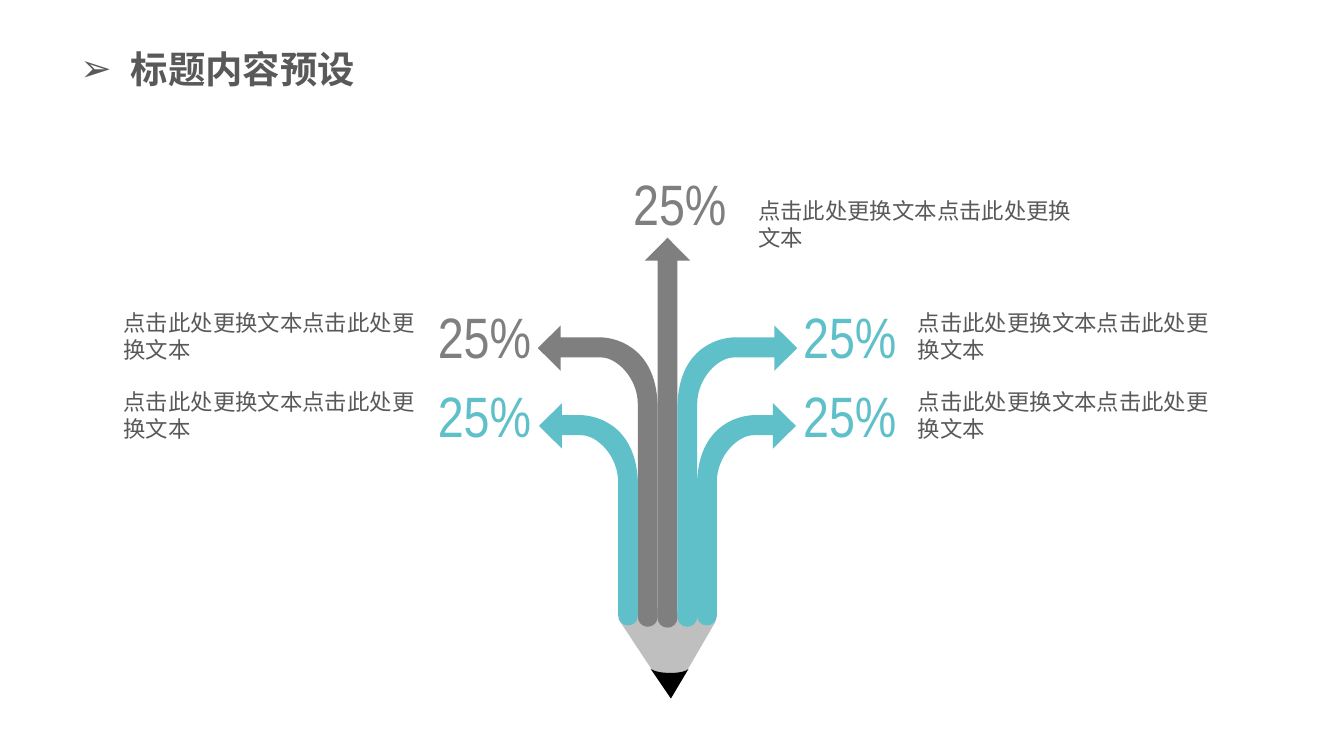
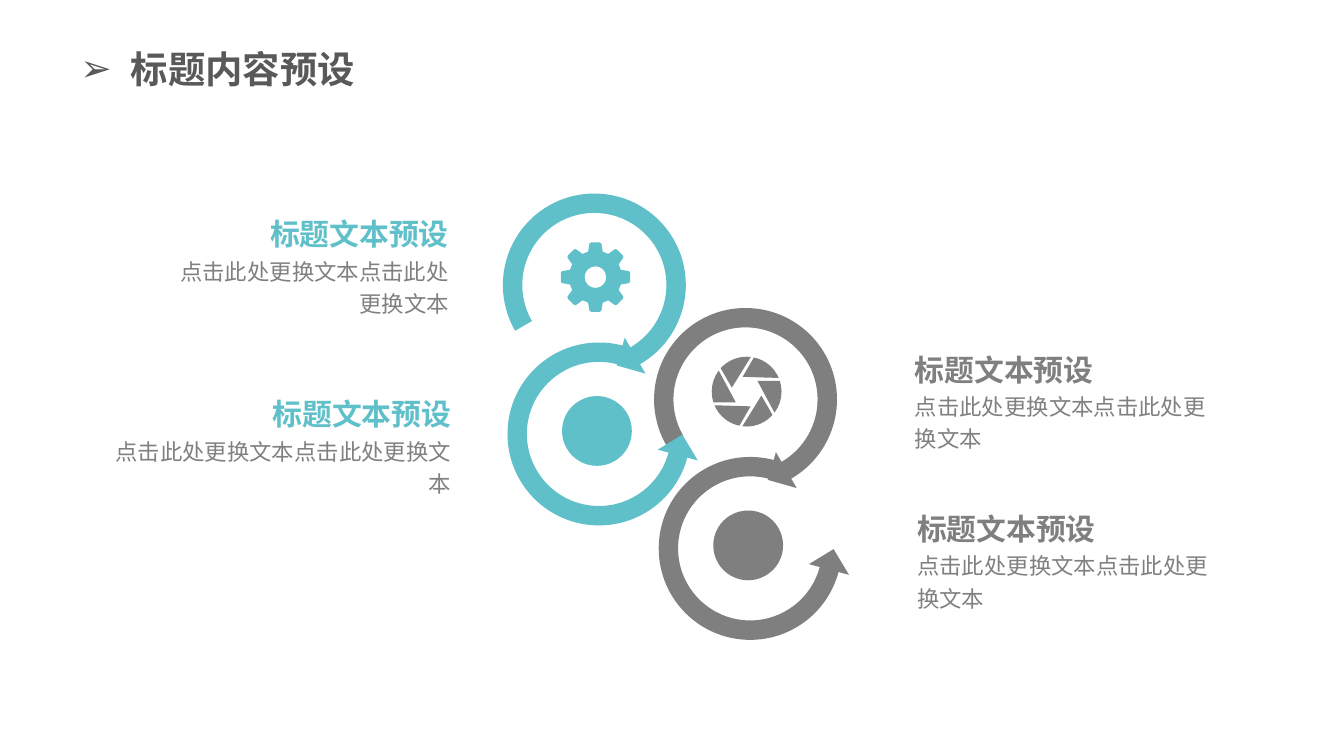
from math import ceil, cos, floor, radians, sin, tan

from lxml.etree import Element as Node, SubElement as Sub
from pptx import Presentation as Deck
from pptx.dml.color import RGBColor as Rgb
from pptx.enum.shapes import MSO_SHAPE as Kind
from pptx.enum.text import MSO_ANCHOR as Anchor, MSO_AUTO_SIZE as Auto, PP_ALIGN as Align
from pptx.oxml.ns import qn
from pptx.util import Pt

HUES = {"teal": "5FC0C9", "gray": "7F7F7F", "soft": "808080", "dark": "595959",
        "wood": "BFBFBF", "lead": "000000"}
SANS = "Noto Sans CJK SC"
SLIM = "Arial Narrow"
HEAD = "标题内容预设"
NAME = "标题文本预设"
BODY = "点击此处更换文本点击此处更换文本"


def hue(key):
    return Rgb.from_string(HUES[key])


def write(slide, text, box, size=12, font=SANS, color="dark", bold=False, right=False,
          pad=(0, 0, 0, 0), wrap=True, mid=False, space=None, bullet=None, grow=False):
    frame = slide.shapes.add_textbox(*map(Pt, box)).text_frame
    frame.word_wrap = wrap
    frame.auto_size = Auto.SHAPE_TO_FIT_TEXT if grow else Auto.NONE
    frame.vertical_anchor = Anchor.MIDDLE if mid else Anchor.TOP
    (frame.margin_left, frame.margin_top,
     frame.margin_right, frame.margin_bottom) = map(Pt, pad)
    para = frame.paragraphs[0]
    para.alignment = Align.RIGHT if right else Align.LEFT
    if space:
        para.line_spacing = space
    if bullet:
        props = para._p.get_or_add_pPr()
        props.set("marL", str(Pt(27)))
        props.set("indent", str(Pt(-27)))
        Sub(props, qn("a:buFont")).set("typeface", "Arial")
        Sub(props, qn("a:buChar")).set("char", bullet)
    run = para.add_run()
    run.text = text
    run.font.size = Pt(size)
    run.font.bold = bold
    run.font.color.rgb = hue(color)
    run.font.name = font
    Sub(run._r.get_or_add_rPr(), qn("a:ea")).set("typeface", font)


def paint(shape, color):
    shape.shadow.inherit = False
    shape.fill.solid()
    shape.fill.fore_color.rgb = hue(color)
    shape.line.fill.background()


def polar(r, deg):
    return r * cos(radians(deg)), r * sin(radians(deg))


def arc(r, start, sweep):
    end = start + sweep
    low, high = sorted((start, end))
    cuts = [90 * n for n in range(ceil(low / 90), floor(high / 90) + 1)]
    stops = sorted({start, end, *cuts}, reverse=sweep < 0)
    steps = [polar(r, start)]
    for a, b in zip(stops, stops[1:]):
        k = 4 / 3 * tan(radians(b - a) / 4)
        (x, y), (p, q) = polar(r, a), polar(r, b)
        steps.append((x - k * y, y + k * x, p + k * q, q - k * p, p, q))
    return steps


def cap(x, y, r, turn):
    return [tuple(v + (y if n % 2 else x) for n, v in enumerate(step))
            for step in arc(r, 90 + 90 * turn, -180 * turn)]


def draw(slide, x, y, loops, color, flip=1):
    def place(step):
        return [(Pt(x + flip * a), Pt(y + b)) for a, b in zip(step[::2], step[1::2])]

    loops = [[place(step) for step in loop] for loop in loops]
    pen = slide.shapes.build_freeform(*loops[0][0][-1], scale=1.0)
    for n, loop in enumerate(loops):
        if n:
            pen.move_to(*loop[0][-1])
        pen.add_line_segments([step[-1] for step in loop[1:]], close=True)
    shape = pen.convert_to_shape()
    lines = list(shape._element.iter(qn("a:lnTo")))
    for line, step in zip(lines, (step for loop in loops for step in loop[1:])):
        if len(step) == 3:
            curve = Node(qn("a:cubicBezTo"))
            for a, b in step:
                Sub(curve, qn("a:pt"), x=str(a - shape.left), y=str(b - shape.top))
            line.getparent().replace(line, curve)
    paint(shape, color)


def title(slide):
    write(slide, HEAD, (36, 21, 202, 32), size=20, bold=True,
          pad=(7.2, 3.6, 7.2, 3.6), bullet="➢", grow=True)


def bend(slide, x, y, side, edge, tip, foot, color):
    far, back = edge + 10.6, tip - 12.3
    steps = [(tip, 0), (back, -12.2), (back, -5.8), (edge + 31.7, -5.8),
             (edge + 19.4, -5.8, edge, 2.1, edge, 32.4),
             *cap(edge + 5.3, foot, 5.3, 1), (far, 30.4),
             (far, 15.8, edge + 22, 5, edge + 30.3, 5), (back, 5), (back, 12.2)]
    draw(slide, x, y, [steps], color, side)


def pencil(slide, x, y):
    foot = 203.6
    wood = [(-14, 0), (-14, 0, -6.8, -6.5, -1.1, -5.8), (4, -5, 12.6, 0.7, 14, 0),
            (16.2, -0.7, 21.2, -5.8, 22.7, -5.8), (24.8, -5, 28, -6.5, 25.6, 2.2),
            (1.8, 43.2), (-26.3, 0.7)]
    lead = [(-9, 27.4), (1.8, 43.2), (11.2, 27.4), (9.7, 28.8, 6.1, 29.5, 1.8, 29.5),
            (-3.2, 29.5, -6.8, 28.8, -9, 27.4)]
    shaft = [(0, 0), (12.2, 12.3), (5.3, 12.3), *cap(0, foot, 5.3, -1),
             (-5.3, 12.3), (-12.2, 12.3)]
    draw(slide, x, y + foot, [wood], "wood")
    draw(slide, x, y + foot, [lead], "lead")
    draw(slide, x, y, [shaft], "gray")
    high, low = (5.3, 69.5, 144), (15.8, 68.8, 101.6)
    bend(slide, x, y + 59.1, -1, *high, "gray")
    bend(slide, x, y + 100.8, -1, *low, "teal")
    bend(slide, x, y + 100.8, 1, *low, "teal")
    bend(slide, x, y + 59.1, 1, *high, "teal")


def note(slide, x, y, width):
    write(slide, BODY, (x, y, width, 30.2), pad=(11.5, 0, 11.5, 0), mid=True)


def share(slide, x, y, color, right=False):
    write(slide, "25%", (x, y, 43.2, 30.2), size=30.5, font=SLIM, color=color,
          right=right, wrap=False, mid=True)


def first(deck):
    slide = deck.slides.add_slide(deck.slide_layouts[6])
    title(slide)
    pencil(slide, 357.6, 127.4)
    for y, left in ((164.8, "gray"), (207.1, "teal")):
        note(slide, 480.2, y, 187.2)
        share(slide, 430.3, y, "teal")
        note(slide, 54.7, y, 180)
        share(slide, 241.4, y, left, right=True)
    note(slide, 394.6, 105.1, 191.5)
    share(slide, 339.2, 93.3, "gray")


def ring(slide, x, y, start, sweep, color):
    end = start + sweep
    turn = 14.5 if sweep > 0 else -14.5
    barb = [polar(54.8, end), polar(44.7, end + turn), polar(32.6, end)]
    draw(slide, x, y, [arc(49, start, sweep) + barb + arc(38.6, end, -sweep)], color)


def gear(slide, x, y, color):
    teeth = [polar(r, 45 * n + turn) for n in range(8)
             for r, turn in ((14.2, -16), (18.3, -10), (18.7, -7),
                             (18.7, 7), (18.3, 10), (14.2, 16))]
    draw(slide, x, y, [teeth, arc(5.8, 0, -360)], color)


def lens(slide, x, y, color):
    blades = [arc(18.7, 222 + 60 * n, 55) + [polar(8.2, 195 + 60 * n)]
              for n in range(6)]
    draw(slide, x, y, blades, color)


def disc(slide, x, y, color):
    r = 18.7
    paint(slide.shapes.add_shape(Kind.OVAL, *map(Pt, (x - r, y - r, 2 * r, 2 * r))), color)


def chain(slide, x, y, color, icon):
    ring(slide, x + 2.5, y + 79.8, 285, -270, color)
    ring(slide, x, y, 150, 270, color)
    disc(slide, x + 1.4, y + 78.2, color)
    icon(slide, x + 0.6, y - 4.2, color)


def label(slide, x, y, width, color, right=False):
    pad = (0, 0, 42.5, 0) if right else (42.5, 0, 0, 0)
    wide = 129.6
    write(slide, NAME, (x - wide if right else x, y, wide, 19.4), size=16, color=color,
          bold=True, right=right, pad=pad, wrap=False)
    write(slide, BODY, (x - width if right else x, y + 19.6, width, 27.4), color="soft",
          right=right, pad=pad, space=1.2)


def second(deck):
    slide = deck.slides.add_slide(deck.slide_layouts[6])
    title(slide)
    chain(slide, 399.4, 214, "gray", lens)
    chain(slide, 318.4, 152.7, "teal", gear)
    label(slide, 283, 115.6, 198, "teal", right=True)
    label(slide, 447.6, 188.2, 199.4, "gray")
    label(slide, 284.3, 212.1, 229.7, "teal", right=True)
    label(slide, 448.9, 273.6, 199.4, "gray")


def main():
    deck = Deck()
    deck.slide_width, deck.slide_height = Pt(720), Pt(405)
    first(deck)
    second(deck)
    deck.save("out.pptx")


if __name__ == "__main__":
    main()
